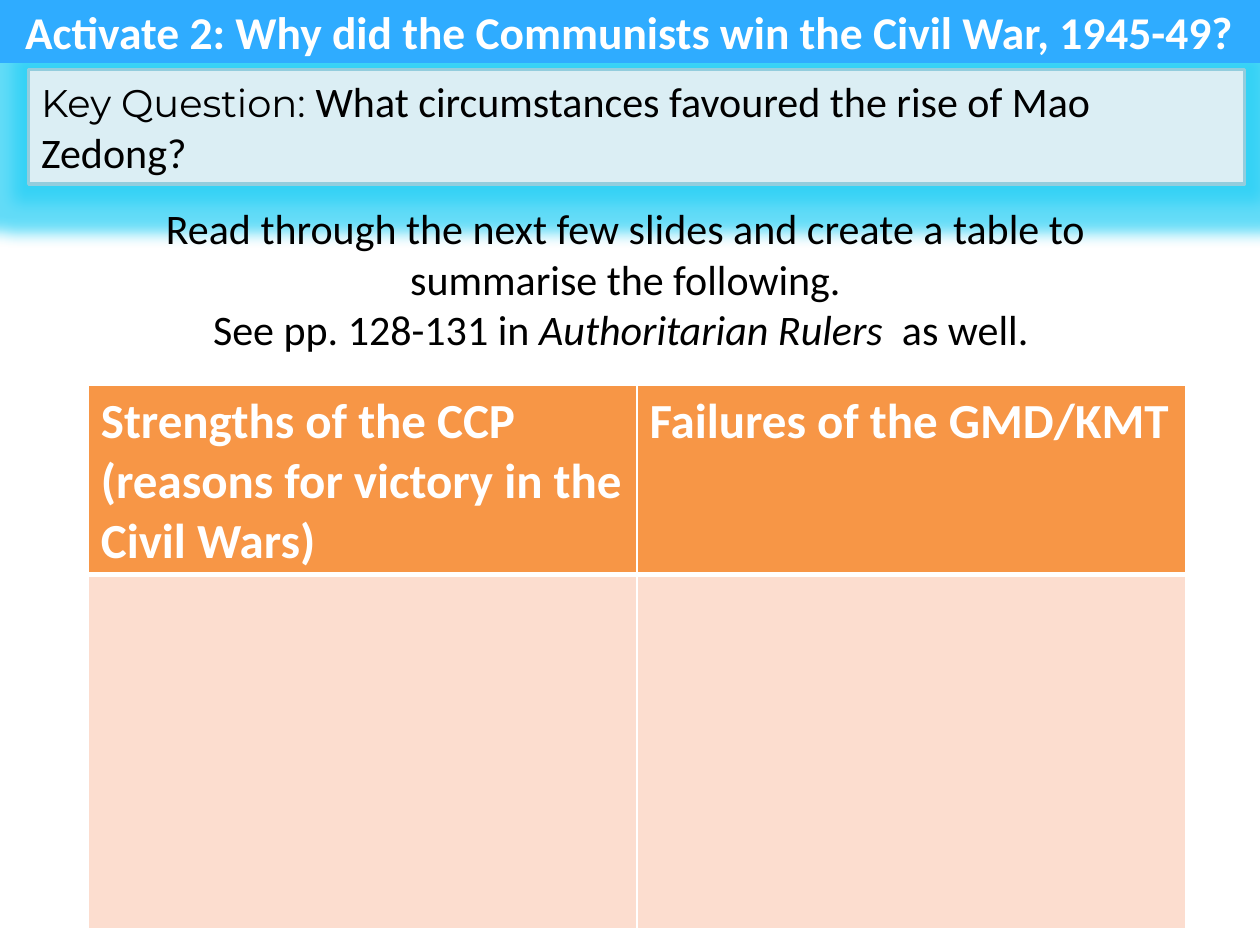
from dataclasses import dataclass

import pptx
import pptx.dml.color
import pptx.enum.text
import pptx.oxml
import pptx.oxml.ns
import pptx.util
from pptx.util import Cm, Pt

ALIGN = pptx.enum.text.PP_ALIGN
ANCHOR = pptx.enum.text.MSO_ANCHOR


@dataclass(frozen=True)
class Theme:
    font: str = "Calibri"
    accent_font: str = "Montserrat"
    text: str = "000000"
    white: str = "FFFFFF"
    title_fill: str = "2FACFF"
    question_fill: str = "DBEEF4"
    question_line: str = "93CDDD"
    glow: str = "22CEF5"
    header_fill: str = "F79646"
    body_fill: str = "FCDDCF"
    title_size: int = 26
    label_size: int = 22
    text_size: int = 24
    header_size: int = 28


THEME = Theme()


def paint(fill, colour):
    fill.solid()
    fill.fore_color.rgb = pptx.dml.color.RGBColor.from_string(colour)


def style(font, size, colour=THEME.text, name=THEME.font, bold=False, italic=False):
    font.size, font.name, font.bold, font.italic = Pt(size), name, bold, italic
    font.color.rgb = pptx.dml.color.RGBColor.from_string(colour)


def add_run(paragraph, text, size=THEME.text_size, **look):
    run = paragraph.add_run()
    run.text = text
    style(run.font, size, **look)


def add_glow(shape, colour, radius, opacity):
    effects = shape._element.spPr.find(pptx.oxml.ns.qn("a:effectLst"))
    effects.append(pptx.oxml.parse_xml(
        f'<a:glow {pptx.oxml.ns.nsdecls("a")} rad="{radius}"><a:srgbClr val="{colour}">'
        f'<a:alpha val="{opacity * 1000}"/></a:srgbClr></a:glow>'))


def add_title(slide, text):
    title = slide.shapes.title
    title.left, title.top, title.width, title.height = Cm(0), Cm(0), Cm(25.4), Cm(1.27)
    paint(title.fill, THEME.title_fill)
    frame = title.text_frame
    frame.text = text
    frame.auto_size = pptx.enum.text.MSO_AUTO_SIZE.NONE
    frame.vertical_anchor = ANCHOR.MIDDLE
    frame.margin_left = frame.margin_right = Cm(0)
    frame.paragraphs[0].alignment = ALIGN.CENTER
    style(frame.paragraphs[0].runs[0].font, THEME.title_size, THEME.white, bold=True)
    # The banner covers the upper part of the glow
    slide.shapes._spTree.append(title._element)


def add_key_question(slide, label, question):
    box = slide.shapes.add_shape(pptx.enum.shapes.MSO_SHAPE.RECTANGLE,
                                 Cm(0.58), Cm(1.4), Cm(24.51), Cm(2.31))
    box.shadow.inherit = False
    paint(box.fill, THEME.question_fill)
    paint(box.line.fill, THEME.question_line)
    box.line.width = Pt(2)
    add_glow(box, THEME.glow, Pt(18), 70)
    box.text_frame.vertical_anchor = ANCHOR.TOP
    paragraph = box.text_frame.paragraphs[0]
    paragraph.alignment = ALIGN.LEFT
    add_run(paragraph, label, THEME.label_size, name=THEME.accent_font)
    add_run(paragraph, question)


def add_instructions(slide):
    box = slide.shapes.add_textbox(Cm(1.32), Cm(3.96), Cm(22.58), Cm(3.33))
    frame = box.text_frame
    frame.word_wrap = True
    task, reading = frame.paragraphs[0], frame.add_paragraph()
    task.alignment = reading.alignment = ALIGN.CENTER
    add_run(task, "Read through the next few slides and create a table to "
                  "summarise the following.")
    add_run(reading, "See pp. 128-131 in ")
    add_run(reading, "Authoritarian Rulers ", italic=True)
    add_run(reading, " as well. ")


def add_borders(cell, **widths):
    properties = cell._tc.get_or_add_tcPr()
    for side in "LRTB":
        properties.append(pptx.oxml.parse_xml(
            f'<a:ln{side} {pptx.oxml.ns.nsdecls("a")} w="{Pt(widths.get(side, 1))}">'
            f'<a:solidFill><a:srgbClr val="{THEME.white}"/></a:solidFill></a:ln{side}>'))


def add_summary_table(slide, headings):
    table = slide.shapes.add_table(2, len(headings), Cm(1.78), Cm(7.77),
                                   Cm(22.12), Cm(10.92)).table
    table.rows[0].height, table.rows[1].height = Cm(3.79), Cm(7.13)
    for column, heading in enumerate(headings):
        header, body = table.cell(0, column), table.cell(1, column)
        add_borders(header, B=3)
        add_borders(body, T=3)
        paint(header.fill, THEME.header_fill)
        paint(body.fill, THEME.body_fill)
        header.text_frame.text = heading
        for paragraph in header.text_frame.paragraphs:
            style(paragraph.runs[0].font, THEME.header_size, THEME.white, bold=True)


def main():
    deck = pptx.Presentation()
    deck.slide_width, deck.slide_height = Cm(25.4), Cm(19.05)
    slide = deck.slides.add_slide(deck.slide_layouts.get_by_name("Title Only"))

    # Question and task
    add_key_question(slide, "Key Question: ",
                     "What circumstances favoured the rise of Mao Zedong?")
    add_instructions(slide)

    # Table for students to complete
    add_summary_table(slide, [
        "Strengths of the CCP\n(reasons for victory in the Civil Wars)",
        "Failures of the GMD/KMT",
    ])

    # Banner
    add_title(slide, "Activate 2: Why did the Communists win the Civil War, 1945-49?")
    deck.save("out.pptx")


if __name__ == "__main__":
    main()
